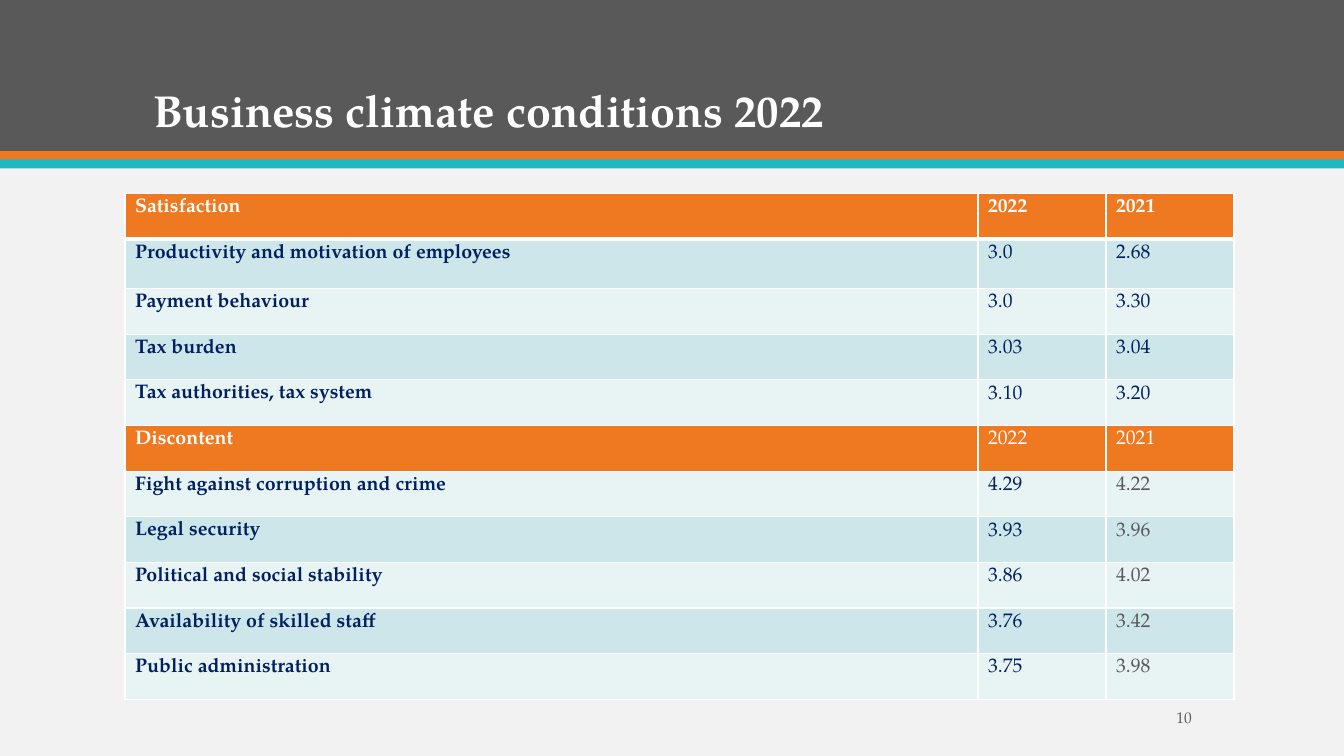
from lxml import etree
from pptx import Presentation
from pptx.dml.color import RGBColor
from pptx.enum.shapes import MSO_SHAPE
from pptx.enum.text import MSO_ANCHOR, PP_ALIGN
from pptx.oxml.ns import qn
from pptx.util import Inches, Pt

RECT = MSO_SHAPE.RECTANGLE
BOTTOM, MIDDLE = MSO_ANCHOR.BOTTOM, MSO_ANCHOR.MIDDLE
LEFT, RIGHT = PP_ALIGN.LEFT, PP_ALIGN.RIGHT

# Content
TITLE = "Business climate conditions 2022"
PAGE = "10"
ROWS = [
    ("Satisfaction", "2022", "2021"),
    ("Productivity and motivation of employees", "3.0", "2.68"),
    ("Payment behaviour", "3.0", "3.30"),
    ("Tax burden", "3.03", "3.04"),
    ("Tax authorities, tax system", "3.10", "3.20"),
    ("Discontent", "2022", "2021"),
    ("Fight against corruption and crime", "4.29", "4.22"),
    ("Legal security", "3.93", "3.96"),
    ("Political and social stability", "3.86", "4.02"),
    ("Availability of skilled staff", "3.76", "3.42"),
    ("Public administration", "3.75", "3.98"),
]
DISCONTENT = 5

# Format
FONT = "TeX Gyre Pagella"
WHITE, GREY, ORANGE, TEAL = "FFFFFF", "595959", "EF7920", "1EB8C1"
NAVY, PALE, BAND, BACKGROUND = "002060", "E8F3F4", "CDE6E9", "F2F2F2"
BARS = [(0, 1.5, GREY), (1.5, 0.09, ORANGE), (1.58, 0.09, TEAL)]
COL_WIDTHS = [8.46, 1.27, 1.27]
ROW_HEIGHTS = [0.49 if i == 1 else 0.453 for i in range(len(ROWS))]


def rgb(value):
    return RGBColor.from_string(value)


def paint(fill, color):
    fill.solid()
    fill.fore_color.rgb = rgb(color)


def write(tf, text, color, **font):
    r = tf.paragraphs[0].add_run()
    r.text = text
    r.font.color.rgb = rgb(color)
    for name, value in {"name": FONT, **font}.items():
        setattr(r.font, name, value)


def add_text(s, box, text, color, anchor, align, spacing, **font):
    tf = s.shapes.add_textbox(*map(Inches, box)).text_frame
    tf.word_wrap = True
    tf.vertical_anchor = anchor
    p = tf.paragraphs[0]
    p.alignment, p.line_spacing = align, spacing
    write(tf, text, color, **font)


def add_borders(cell, widths):
    tcPr = cell._tc.get_or_add_tcPr()
    for side, width in widths.items():
        ln = etree.SubElement(tcPr, qn(f"a:ln{side}"), w=str(Pt(width)))
        fill = etree.SubElement(ln, qn("a:solidFill"))
        etree.SubElement(fill, qn("a:srgbClr"), val=WHITE)


prs = Presentation()
prs.slide_width, prs.slide_height = Inches(13.33), Inches(7.5)
s = prs.slides.add_slide(prs.slide_layouts[6])
paint(s.background.fill, BACKGROUND)

# Header bars and title
for top, height, color in BARS:
    sp = s.shapes.add_shape(RECT, 0, Inches(top), prs.slide_width, Inches(height))
    sp.shadow.inherit = False
    paint(sp.fill, color)
    sp.line.fill.background()
add_text(s, (1.42, 0.28, 10.5, 1.13), TITLE, WHITE, BOTTOM, LEFT, 0.9,
         size=Pt(32), bold=True)

# Table
table = s.shapes.add_table(
    len(ROWS), len(COL_WIDTHS), Inches(1.24), Inches(1.92),
    Inches(sum(COL_WIDTHS)), Inches(sum(ROW_HEIGHTS))).table
for column, width in zip(table.columns, COL_WIDTHS):
    column.width = Inches(width)
for row, height in zip(table.rows, ROW_HEIGHTS):
    row.height = Inches(height)

for i, values in enumerate(ROWS):
    heading = i in (0, DISCONTENT)
    for j, text in enumerate(values):
        cell = table.cell(i, j)
        add_borders(cell, {"L": 1, "R": 1, "T": 3 if i == 1 else 1,
                           "B": 3 if i == 0 else 1})
        paint(cell.fill, ORANGE if heading else BAND if i % 2 else PALE)
        if heading:
            color = WHITE
        else:
            color = GREY if i > DISCONTENT and j == 2 else NAVY
        write(cell.text_frame, text, color, size=Pt(14), bold=i == 0 or j == 0)

# Page number
add_text(s, (10.42, 6.97, 1.5, 0.3), PAGE, GREY, MIDDLE, RIGHT, 1.0, size=Pt(11))

prs.save("out.pptx")
